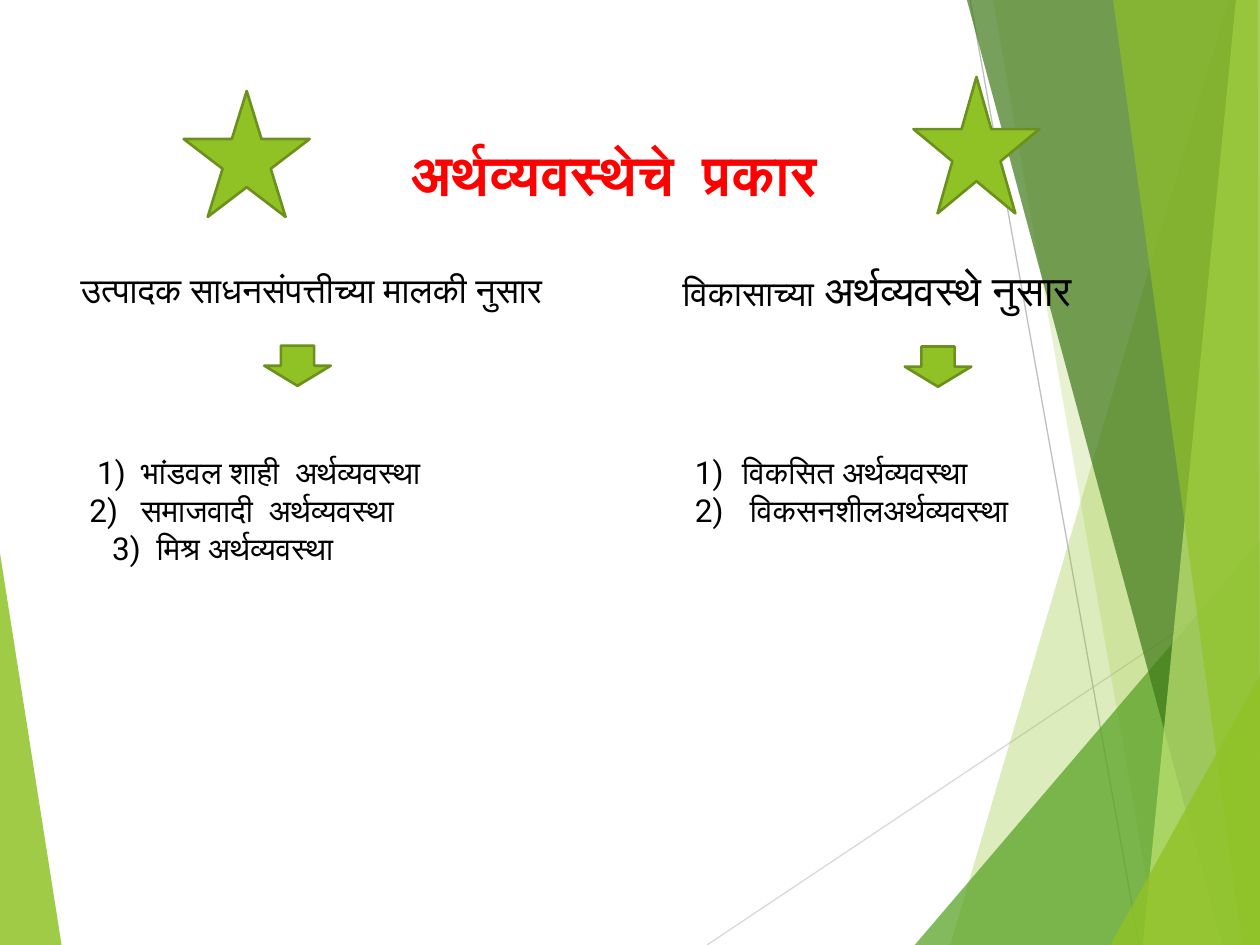
import pptx
import pptx.util
import pptx.dml.color
import pptx.enum.shapes
import pptx.enum.text
import pptx.oxml
import pptx.oxml.ns
import lxml.etree

Pt = pptx.util.Pt
RGB = pptx.dml.color.RGBColor
SHAPE = pptx.enum.shapes.MSO_SHAPE
ANCHOR = pptx.enum.text.MSO_ANCHOR
qn = pptx.oxml.ns.qn

LEAF = RGB(0x90, 0xC2, 0x26)
GRASS = RGB(0x54, 0xA0, 0x21)
FOREST = RGB(0x3F, 0x78, 0x19)
LIME = RGB(0xC0, 0xE4, 0x74)
OUTLINE = RGB(0x6B, 0x90, 0x1C)
PALE_GREY = RGB(0xD9, 0xD9, 0xD9)
GREY = RGB(0xBF, 0xBF, 0xBF)
RED = RGB(0xFF, 0, 0)
BLACK = RGB(0, 0, 0)
FONT = "Roboto"


def style(font, size, color):
    font.name = FONT
    font.size = Pt(size)
    font.color.rgb = color
    complex_script = lxml.etree.SubElement(font._element, qn("a:cs"))
    complex_script.set("typeface", FONT)


def add_text_frame(left, top, width, height):
    frame = slide.shapes.add_textbox(Pt(left), Pt(top), Pt(width), Pt(height)).text_frame
    frame.word_wrap = True
    return frame


deck = pptx.Presentation()
deck.slide_width, deck.slide_height = Pt(720), Pt(540)
slide = deck.slides.add_slide(deck.slide_layouts[5])

rays = [
    (((558, 0), (690, 540), (720, 540), (720, 0)), None, 0),
]
left_wedge = ((0, 316), (35.2, 540), (0, 540))
right_rays = [
    (((702, 0), (543, 540), (720, 540), (720, 0)), LEAF, 30),
    (((567.5, 0), (661.7, 540), (720, 540), (720, 0)), LEAF, 20),
    (((522.7, 540), (720, 309), (720, 540)), GRASS, 72),
    (((552.5, 0), (698.4, 540), (720, 540), (720, 0)), FOREST, 70),
    (((706.3, 0), (653, 540), (720, 540), (720, 0)), LIME, 70),
    (((636, 0), (710, 540), (720, 540), (718.6, 0)), LEAF, 65),
    (((634.5, 540), (720, 386), (720, 540)), LEAF, 80),
]
thin_lines = [
    ((404, 540), (720, 329), PALE_GREY),
    ((554.4, 0), (651, 540), GREY),
]
for start, end, color in thin_lines:
    line = slide.shapes.add_connector(
        pptx.enum.shapes.MSO_CONNECTOR.STRAIGHT, *map(Pt, start + end))
    line.line.color.rgb = color
    line.line.width = Pt(0.75)
    lxml.etree.SubElement(line._element.spPr, qn("a:effectLst"))

for corners, color, opacity in [(left_wedge, LEAF, 85)] + right_rays:
    points = [(Pt(x), Pt(y)) for x, y in corners]
    builder = slide.shapes.build_freeform(*points[0])
    builder.add_line_segments(points[1:], close=True)
    ray = builder.convert_to_shape()
    ray.shadow.inherit = False
    ray.fill.solid()
    ray.fill.fore_color.rgb = color
    ray.line.fill.background()
    tint = ray._element.spPr.find(qn("a:solidFill"))[0]
    lxml.etree.SubElement(tint, qn("a:alpha")).set("val", str(opacity * 1000))

title = slide.shapes.title
title.left, title.top, title.width, title.height = Pt(228), Pt(54), Pt(273), Pt(67.5)
title.text_frame.text = "अर्थव्यवस्थेचे  प्रकार"
title.text_frame.vertical_anchor = ANCHOR.BOTTOM
heading = title.text_frame.paragraphs[0]
heading.alignment = pptx.enum.text.PP_ALIGN.LEFT
style(heading.font, 32, RED)
heading.font.bold = True

ornaments = [
    (SHAPE.STAR_5_POINT, 105, 52, 72, 72),
    (SHAPE.STAR_5_POINT, 522, 44, 72, 78),
    (SHAPE.DOWN_ARROW, 151, 197.5, 38, 23),
    (SHAPE.DOWN_ARROW, 517, 198, 38, 23),
]
for kind, *box in ornaments:
    ornament = slide.shapes.add_shape(kind, *map(Pt, box))
    ornament.shadow.inherit = False
    ornament.fill.solid()
    ornament.fill.fore_color.rgb = LEAF
    ornament.line.color.rgb = OUTLINE
    ornament.line.width = Pt(1.5)

criteria = [
    ((39, 150, 314, 31.5), [("उत्पादक साधनसंपत्तीच्या मालकी नुसार", 20)]),
    ((383, 147.5, 306, 36), [("विकासाच्या", 20), (" अर्थव्यवस्थे नुसार", 24)]),
]
for box, pieces in criteria:
    criterion = add_text_frame(*box).paragraphs[0]
    for words, size in pieces:
        run = criterion.add_run()
        run.text = words
        style(run.font, size, BLACK)

economy_types = [
    ((44, 255.5, 238, 73), [
        ("भांडवल शाही  अर्थव्यवस्था", 29.5, 25),
        ("समाजवादी  अर्थव्यवस्था", 29.5, 29.5),
        ("मिश्र अर्थव्यवस्था", 38.5, 25.5),
    ]),
    ((390, 255.5, 312, 51), [
        ("विकसित अर्थव्यवस्था", 27, 27),
        (" विकसनशीलअर्थव्यवस्था", 27, 27),
    ]),
]
for box, entries in economy_types:
    frame = add_text_frame(*box)
    for index, (words, margin, hanging) in enumerate(entries):
        entry = frame.add_paragraph() if index else frame.paragraphs[0]
        entry.text = words
        style(entry.font, 18, BLACK)
        properties = entry._p.get_or_add_pPr()
        properties.set("marL", str(Pt(margin)))
        properties.set("indent", str(-Pt(hanging)))
        number = pptx.oxml.parse_xml(
            f'<a:buAutoNum {pptx.oxml.ns.nsdecls("a")} type="arabicParenR"/>')
        properties.insert(0, number)

deck.save("out.pptx")
